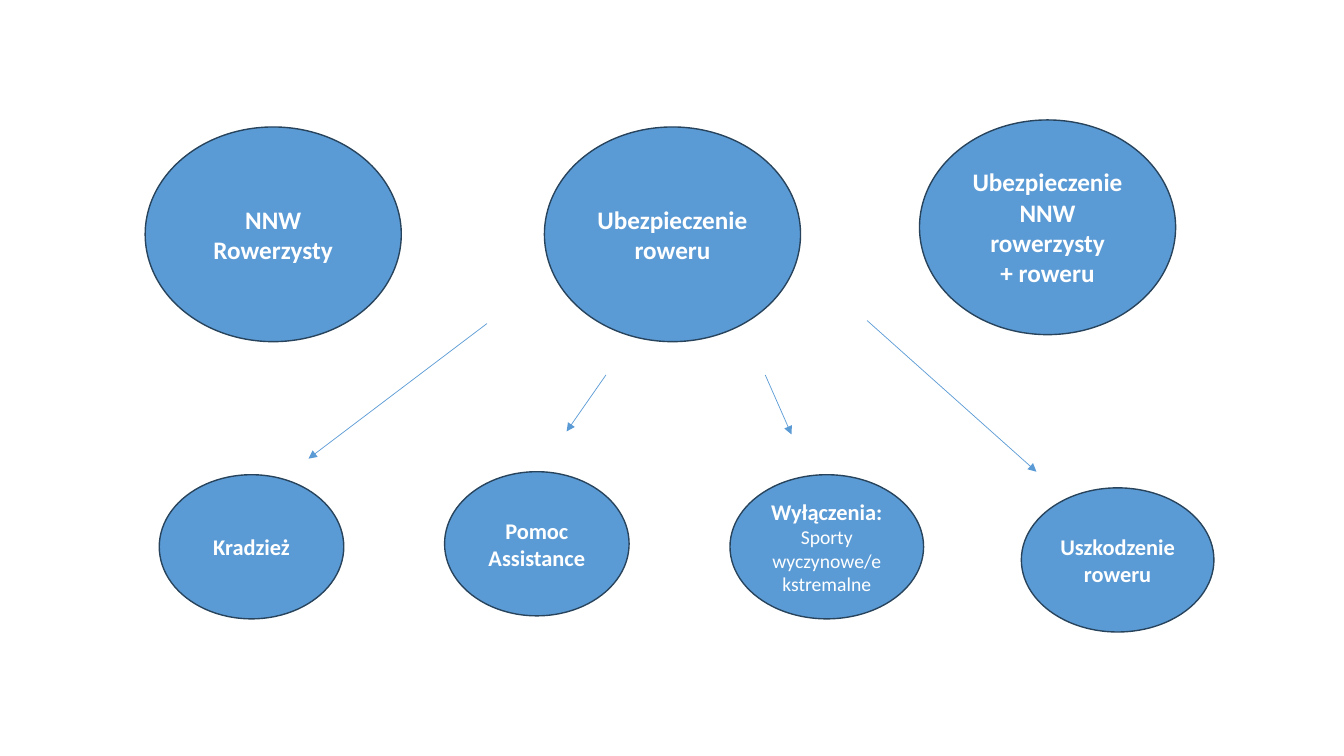
from dataclasses import dataclass

from lxml import etree
from pptx import Presentation
from pptx.dml.color import RGBColor
from pptx.enum.shapes import MSO_CONNECTOR as Conn, MSO_SHAPE as Shape
from pptx.enum.text import MSO_ANCHOR as Anchor, PP_ALIGN as Align
from pptx.oxml.ns import qn
from pptx.slide import Slide
from pptx.util import Inches, Pt


@dataclass(frozen=True)
class Theme:
    blue: RGBColor = RGBColor(0x5B, 0x9B, 0xD5)
    outline: RGBColor = RGBColor(0x28, 0x44, 0x5D)
    white: RGBColor = RGBColor(0xFF, 0xFF, 0xFF)
    font: str = "Calibri"
    product_size: int = 18
    cover_size: int = 16
    detail_size: int = 14
    outline_width: float = 1
    arrow_width: float = 0.5


@dataclass(frozen=True)
class Line:
    text: str
    size: int
    bold: bool = True


@dataclass(frozen=True)
class Bubble:
    left: float
    top: float
    width: float
    height: float
    lines: tuple[Line, ...]


@dataclass(frozen=True)
class Arrow:
    x1: float
    y1: float
    x2: float
    y2: float


THEME = Theme()


def product(left: float, top: float, *texts: str) -> Bubble:
    lines = tuple(Line(text, THEME.product_size) for text in texts)
    return Bubble(left, top, 2.54, 2.13, lines)


def cover(left: float, top: float, width: float, title: str, *details: str) -> Bubble:
    lines = (Line(title, THEME.cover_size),) + tuple(
        Line(text, THEME.detail_size, False) for text in details
    )
    return Bubble(left, top, width, 1.43, lines)


BUBBLES = (
    product(1.44, 1.26, "NNW Rowerzysty"),
    product(5.4, 1.26, "Ubezpieczenie roweru"),
    product(9.12, 1.19, "Ubezpieczenie NNW rowerzysty", "+ roweru"),
    cover(1.58, 4.71, 1.83, "Kradzież"),
    cover(4.41, 4.68, 1.83, "Pomoc Assistance"),
    cover(7.24, 4.71, 1.92, "Wyłączenia:", "Sporty wyczynowe/ekstremalne"),
    cover(10.13, 4.84, 1.91, "Uszkodzenie roweru"),
)

ARROWS = (
    Arrow(4.83, 3.21, 3.06, 4.55),
    Arrow(6.01, 3.72, 5.62, 4.28),
    Arrow(7.59, 3.72, 7.85, 4.31),
    Arrow(8.6, 3.18, 10.28, 4.68),
)


def draw_bubble(s: Slide, bubble: Bubble) -> None:
    sp = s.shapes.add_shape(
        Shape.OVAL,
        Inches(bubble.left),
        Inches(bubble.top),
        Inches(bubble.width),
        Inches(bubble.height),
    )
    sp.shadow.inherit = False
    sp.fill.solid()
    sp.fill.fore_color.rgb = THEME.blue
    sp.line.color.rgb = THEME.outline
    sp.line.width = Pt(THEME.outline_width)
    tf = sp.text_frame
    tf.word_wrap = True
    tf.vertical_anchor = Anchor.MIDDLE
    for i, line in enumerate(bubble.lines):
        p = tf.add_paragraph() if i else tf.paragraphs[0]
        p.alignment = Align.CENTER
        r = p.add_run()
        r.text = line.text
        r.font.name = THEME.font
        r.font.size = Pt(line.size)
        r.font.bold = line.bold
        r.font.color.rgb = THEME.white


def draw_arrow(s: Slide, arrow: Arrow) -> None:
    cxn = s.shapes.add_connector(
        Conn.STRAIGHT,
        Inches(arrow.x1),
        Inches(arrow.y1),
        Inches(arrow.x2),
        Inches(arrow.y2),
    )
    cxn.line.color.rgb = THEME.blue
    cxn.line.width = Pt(THEME.arrow_width)
    etree.SubElement(cxn.line._get_or_add_ln(), qn("a:tailEnd"), type="triangle")
    etree.SubElement(cxn._element.spPr, qn("a:effectLst"))


def main() -> None:
    prs = Presentation()
    prs.slide_width = Inches(13.33)
    prs.slide_height = Inches(7.5)
    s = prs.slides.add_slide(prs.slide_layouts[6])
    for bubble in BUBBLES:
        draw_bubble(s, bubble)
    for arrow in ARROWS:
        draw_arrow(s, arrow)
    prs.save("out.pptx")


if __name__ == "__main__":
    main()
